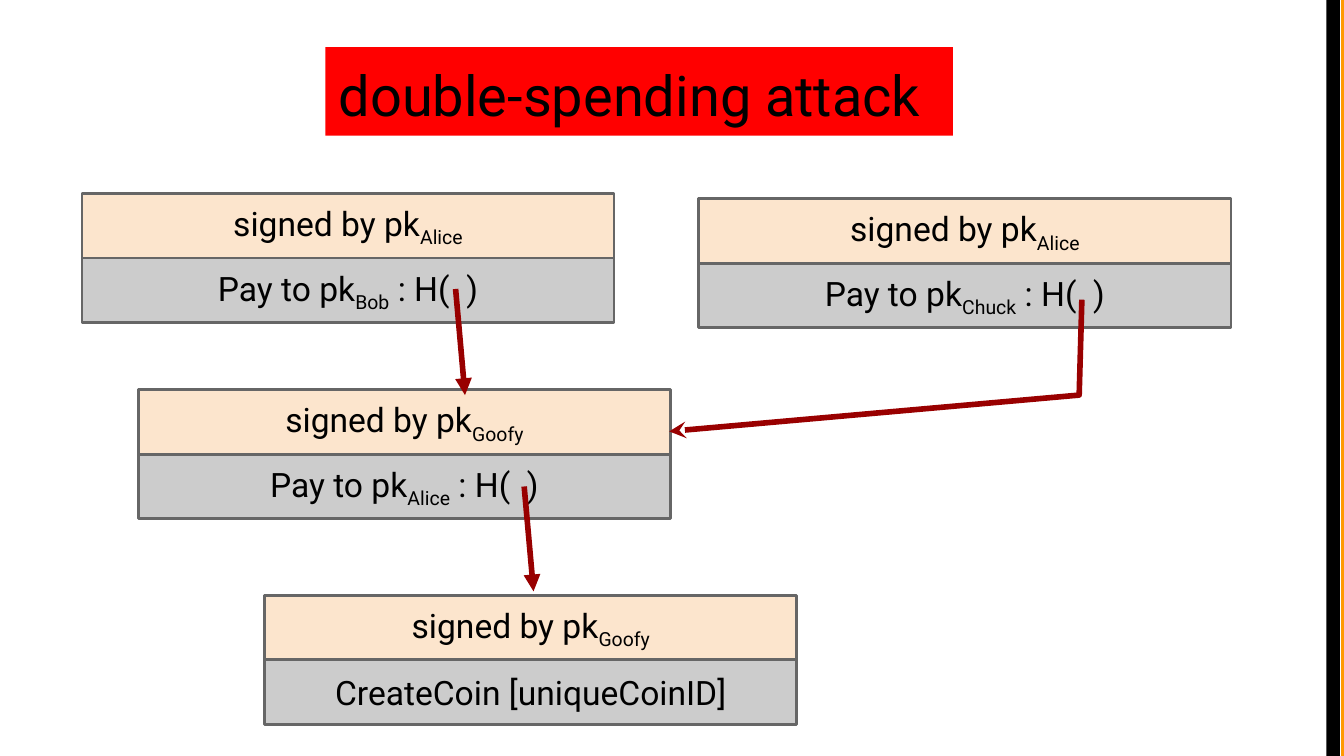
from pptx import Presentation
from pptx.dml.color import RGBColor
from pptx.enum import shapes as kinds, text as txt
from pptx.oxml.ns import qn
from pptx.util import Inches, Pt
from lxml import etree

HUE = {"orange": "FF9900", "black": "000000", "red": "FF0000", "peach": "FCE5CD",
       "grey": "CCCCCC", "edge": "666666", "arrow": "980000", "bend": "990000"}
WIDE, HIGH = 3.96, 0.48


def add_box(left, top, wide, high, fill, parts=()):
    """Add a rectangle; every second part of its text is a subscript."""
    box = slide.shapes.add_shape(kinds.MSO_SHAPE.RECTANGLE, Inches(left),
                                 Inches(top), Inches(wide), Inches(high))
    box.shadow.inherit = False
    box.fill.solid()
    box.fill.fore_color.rgb = RGBColor.from_string(HUE[fill])
    if not parts:
        box.line.fill.background()
        return
    box.line.color.rgb = RGBColor.from_string(HUE["edge"])
    box.line.width = Pt(1.5)
    frame = box.text_frame
    frame.word_wrap = True
    frame.vertical_anchor = txt.MSO_ANCHOR.MIDDLE
    frame.margin_top = frame.margin_bottom = Inches(0.1)
    para = frame.paragraphs[0]
    para.alignment = txt.PP_ALIGN.CENTER
    for i, part in enumerate(parts):
        run = para.add_run()
        run.text = part
        run.font.name, run.font.size = "Roboto", Pt(18)
        run.font.color.rgb = RGBColor.from_string(HUE["black"])
        if i % 2:
            run._r.get_or_add_rPr().set("baseline", "-25000")


def style_arrow(item, hue, head):
    """Give a line its colour, width and arrowhead, and no shadow."""
    item.line.color.rgb = RGBColor.from_string(HUE[hue])
    item.line.width = Pt(3)
    props = item._element.spPr
    etree.SubElement(props.find(qn("a:ln")), qn("a:tailEnd"), type=head)
    if props.find(qn("a:effectLst")) is None:
        etree.SubElement(props, qn("a:effectLst"))


# Widescreen slide, 16 to 9
deck = Presentation()
deck.slide_width = Inches(10)
deck.slide_height = Inches(10) * 9 // 16
slide = deck.slides.add_slide(deck.slide_layouts[5])

# Bars on the right edge
for left, fill in ((9.98, "orange"), (9.87, "black")):
    add_box(left, 0, 0.1, deck.slide_height.inches, fill)

# Title
title = slide.shapes.title
title.left, title.top = Inches(2.42), Inches(0.35)
title.width, title.height = Inches(4.67), Inches(0.66)
title.fill.solid()
title.fill.fore_color.rgb = RGBColor.from_string(HUE["red"])
frame = title.text_frame
frame.text = "double-spending attack"
frame.auto_size = txt.MSO_AUTO_SIZE.NONE
frame.vertical_anchor = txt.MSO_ANCHOR.TOP
frame.margin_left = frame.margin_right = Inches(0.1)
frame.margin_top = frame.margin_bottom = Inches(0.1)
para = frame.paragraphs[0]
para.alignment = txt.PP_ALIGN.LEFT
font = para.runs[0].font
font.name, font.size = "Roboto", Pt(30)
font.color.rgb = RGBColor.from_string(HUE["black"])

# Blocks: left, top, signer, payment, arrow to the block below
pay, hash_end = "Pay to pk", " : H(  )"
blocks = [
    (1.97, 4.43, "Goofy", ["CreateCoin [uniqueCoinID]"], None),
    (1.03, 2.9, "Goofy", [pay, "Alice", hash_end], (3.9, 3.62, 3.97, 4.4)),
    (0.61, 1.44, "Alice", [pay, "Bob", hash_end], (3.39, 2.15, 3.46, 2.94)),
    (5.2, 1.48, "Alice", [pay, "Chuck", hash_end], None),
]
for left, top, signer, parts, ends in blocks:
    add_box(left, top + HIGH, WIDE, HIGH, "grey", parts)
    if ends:
        link = slide.shapes.add_connector(kinds.MSO_CONNECTOR.STRAIGHT,
                                          *[Inches(n) for n in ends])
        style_arrow(link, "arrow", "triangle")
    add_box(left, top, WIDE, HIGH, "peach", ["signed by pk", signer])

# Bent arrow from the second payment
path = [(Inches(x), Inches(y)) for x, y in ((8.05, 2.23), (8.03, 2.94), (4.98, 3.21))]
pen = slide.shapes.build_freeform(*path[0])
pen.add_line_segments(path[1:], close=False)
bend = pen.convert_to_shape()
bend.shadow.inherit = False
bend.fill.background()
style_arrow(bend, "bend", "stealth")

deck.save("out.pptx")
